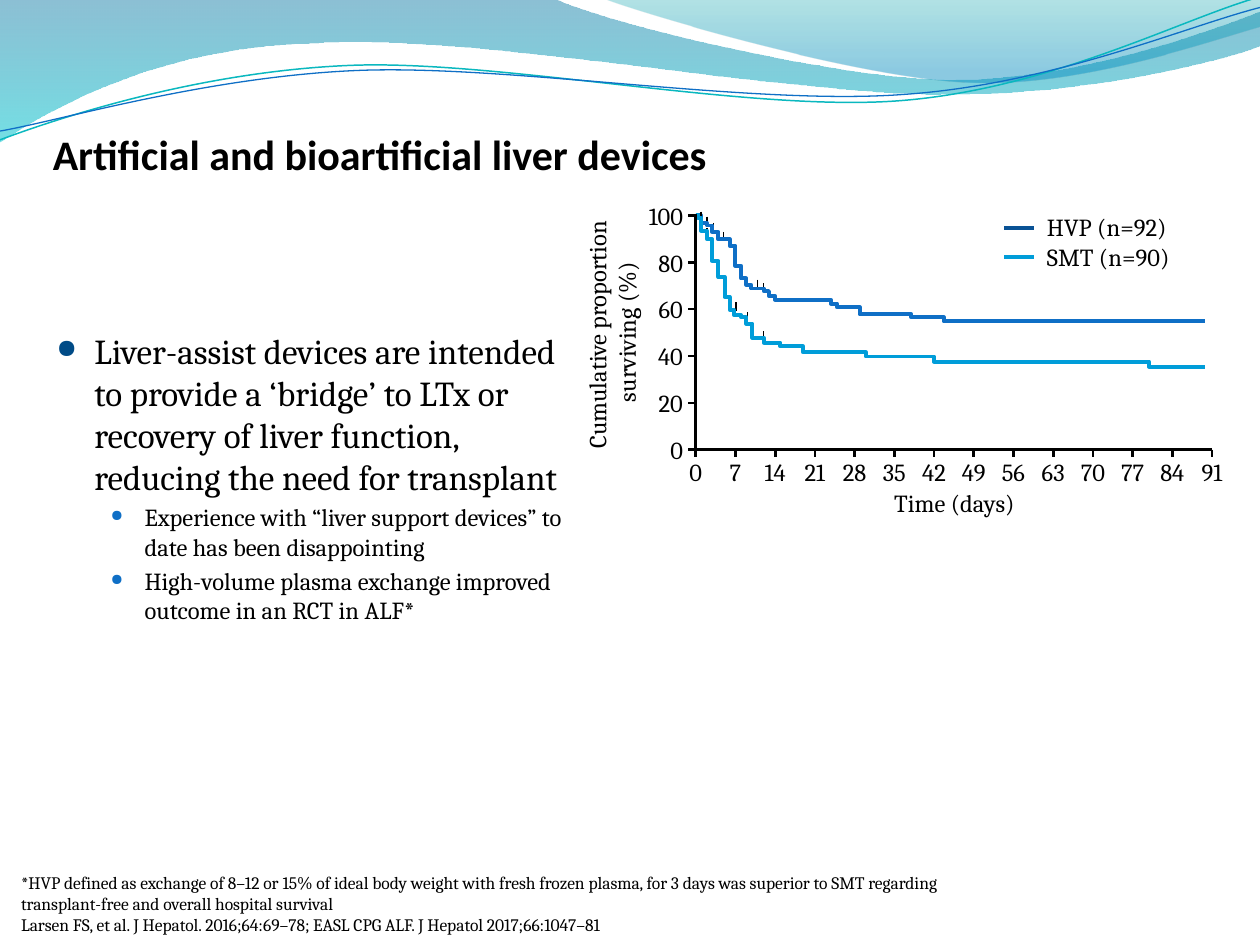
from math import cos, radians, sin

from lxml.etree import SubElement
from pptx import Presentation
from pptx.dml.color import RGBColor
from pptx.enum.shapes import MSO_CONNECTOR
from pptx.enum.text import MSO_ANCHOR, MSO_AUTO_SIZE, PP_ALIGN
from pptx.oxml.ns import qn
from pptx.util import Pt

THEME = {
    "font": "Cambria", "title_font": "Calibri",
    "title": 24, "lead": 20, "text": 14, "note": 10,
    "ink": "000000", "hvp": "0F6FC6", "hvp_key": "095295", "smt": "009DD9",
    "lead_bullet": "004B87", "sub_bullet": "0F6FC6", "teal_line": "0AB8BF",
}
TITLE = "Artificial and bioartificial liver devices"
NOTES = [
    "*HVP defined as exchange of 8–12 or 15% of ideal body weight with fresh frozen plasma, "
    "for 3 days was superior to SMT regarding transplant-free and overall hospital survival",
    "Larsen FS, et al. J Hepatol. 2016;64:69–78; EASL CPG ALF. J Hepatol 2017;66:1047–81",
]
BULLETS = [
    (0, "Liver-assist devices are intended to provide a ‘bridge’ to LTx or recovery of "
        "liver function, reducing the need for transplant"),
    (1, "Experience with “liver support devices” to date has been disappointing"),
    (1, "High-volume plasma exchange improved outcome in an RCT in ALF*"),
]
BULLET_STYLES = [
    {"size": "lead", "color": "lead_bullet", "percent": 75, "margin": 21.6, "indent": -21.6},
    {"size": "text", "color": "sub_bullet", "percent": 65, "margin": 50.4, "indent": -19.4},
]
LAST_DAY, OVERLAP = 89.7, 0.9
CURVES = [
    {"color": "hvp", "key": "hvp_key", "label": "HVP (n=92)", "joint": 75.9,
     "steps": [(0.9, 96.8), (2, 95.7), (2.9, 93), (4, 89.8), (6, 87.1), (7, 78.5), (8, 73.1),
               (8.9, 70.4), (9.8, 68.8), (12, 67.7), (12.9, 65.6), (14, 64), (23.8, 62.4),
               (24.9, 60.8), (28.9, 57.8), (38, 56.5), (43.7, 54.8)],
     "censored": [(2, 99.5), (3.1, 96.8), (4, 93), (4.9, 93), (6, 90.3), (8, 76.9),
                  (10.9, 72.6), (12, 71)]},
    {"color": "smt", "key": "smt", "label": "SMT (n=90)", "joint": 71.7,
     "steps": [(0.4, 98.9), (0.9, 93.5), (2, 89.8), (2.9, 80.6), (4, 73.7), (5.1, 65.1),
               (6, 59.7), (6.7, 57.5), (8, 56.5), (8.9, 53.8), (10, 47.8), (12, 45.7),
               (14.9, 44.1), (18.9, 41.6), (30, 39.8), (42, 37.6), (79.9, 35.5)],
     "censored": [(0.9, 101.6), (0.9, 97.8), (2, 94.6), (2.9, 85.5), (4, 78), (5.1, 69.4),
                  (6, 64), (7.1, 62.9), (9.1, 58.6), (12, 50.5)]},
]
WAVES = [
    {"path": [(0, 0), (316.8, -0.7),
              (342.7, 12.2, 478.1, 45.4, 545.8, 45.4), (614.2, 45.4, 689.8, 18.7, 720, 6.5),
              (720.7, 25.9),
              (707.8, 31.7, 626.4, 54.7, 537.1, 54), (447.8, 54, 275, 20.2, 185, 24.5),
              (92.9, 25.9, 33.1, 59.8, -0.7, 81.4)],
     "gradient": [(0, "0074A1", 45), (1, "00C6CF", 55)]},
    {"path": [(344.9, -0.7),
              (366.5, 7.9, 491, 44.6, 553.7, 46.8), (616.3, 49.7, 691.9, 23, 720, 15.1),
              (720, 0)],
     "gradient": [(0, "00A1A9", 30), (0.8, "008BBF", 45)]},
    {"path": [(0, 79.9), (34.6, 67, 113.8, 41, 199.4, 37.4),
              (284.4, 33.8, 427, 64.1, 513.4, 57.6), (599.8, 51.1, 675.4, 10.8, 718.6, -1.4)],
     "line": ("teal_line", 0.85), "center": (359.3, 41.4)},
    {"path": [(0, 74.9), (33.8, 69.1, 118.1, 43.9, 203.8, 40.3),
              (290.2, 36.7, 429.8, 60.5, 516.2, 54), (601.9, 48.2, 677.5, 15.1, 720, 4.3)],
     "line": ("hvp", 0.75), "center": (359.7, 42.5)},
]
TILT = 2.7
AXIS = {"left": 397.6, "right": 692.6, "top": 123.1, "bottom": 257, "tick": 4.4}


def color(name):
    return RGBColor.from_string(THEME.get(name, name))


def apply(target, values):
    for name, value in values.items():
        setattr(target, name, value)


def day_x(day):
    return AXIS["left"] + day * (AXIS["right"] - AXIS["left"]) / 91


def percent_y(percent):
    return AXIS["bottom"] - percent * (AXIS["bottom"] - AXIS["top"]) / 100


def add_text(slide, box, texts, size="text", font="font", bold=False, align=PP_ALIGN.LEFT,
             anchor=MSO_ANCHOR.TOP, margins=(0, 0, 0, 0), wrap=False):
    shape = slide.shapes.add_textbox(*map(Pt, box))
    frame = shape.text_frame
    sides = ("margin_left", "margin_top", "margin_right", "margin_bottom")
    apply(frame, dict(zip(sides, map(Pt, margins))))
    auto_size = MSO_AUTO_SIZE.NONE if wrap else MSO_AUTO_SIZE.SHAPE_TO_FIT_TEXT
    apply(frame, {"word_wrap": wrap, "vertical_anchor": anchor, "auto_size": auto_size})
    frame.text = "\n".join(texts)
    for paragraph in frame.paragraphs:
        paragraph.alignment = align
        apply(paragraph.font, {"name": THEME[font], "size": Pt(THEME[size]), "bold": bold})
        paragraph.font.color.rgb = color("ink")
    return shape


def add_line(slide, start, end, line_color, width):
    connector = slide.shapes.add_connector(MSO_CONNECTOR.STRAIGHT, *map(Pt, start + end))
    connector.line.color.rgb = color(line_color)
    connector.line.width = Pt(width)
    SubElement(connector._element.spPr, qn("a:effectLst"))


def add_outline(slide, points, closed=False):
    points = [(Pt(x), Pt(y)) for x, y in points]
    builder = slide.shapes.build_freeform(*points[0])
    builder.add_line_segments(points[1:], close=closed)
    shape = builder.convert_to_shape()
    shape.shadow.inherit = False
    shape.fill.background()
    shape.line.fill.background()
    return shape


def set_line(shape, line_color, width):
    shape.line.color.rgb = color(line_color)
    shape.line.width = Pt(width)


def turn(point, center):
    angle = radians(TILT)
    across, down = point[0] - center[0], point[1] - center[1]
    return (center[0] + across * cos(angle) - down * sin(angle),
            center[1] + across * sin(angle) + down * cos(angle))


def bend(shape, segments):
    lines = iter(list(shape._element.spPr.iter(qn("a:lnTo"))))
    for segment in segments:
        first = next(lines)
        if len(segment) == 6:
            first.tag = qn("a:cubicBezTo")
            for line in (next(lines), next(lines)):
                first.append(line[0])
                line.getparent().remove(line)


def add_wave(slide, wave):
    path = wave["path"]
    points = [segment[i:i + 2] for segment in path for i in range(0, len(segment), 2)]
    if "center" in wave:
        points = [turn(point, wave["center"]) for point in points]
    shape = add_outline(slide, points, "gradient" in wave)
    bend(shape, path[1:])
    if "line" in wave:
        set_line(shape, *wave["line"])
        shape.rotation = 360 - TILT
        return
    shape.fill.gradient()
    shape.fill.gradient_angle = 270
    for stop, (position, stop_color, _) in zip(shape.fill.gradient_stops, wave["gradient"]):
        stop.position = position
        stop.color.rgb = color(stop_color)
    for element, (_, _, opacity) in zip(shape._element.spPr.iter(qn("a:srgbClr")), wave["gradient"]):
        SubElement(element, qn("a:alpha"), val=str(opacity * 1000))


def add_bullets(slide):
    shape = add_text(slide, (25.2, 105.8, 306.7, 364.3), [text for _, text in BULLETS],
                     margins=(7.2, 82.4, 7.2, 3.6), wrap=True)
    for index, (paragraph, (level, _)) in enumerate(zip(shape.text_frame.paragraphs, BULLETS)):
        style = BULLET_STYLES[level]
        size = THEME[style["size"]]
        paragraph.level = level
        if index:
            paragraph.space_before = Pt(size * 0.2)
        properties = paragraph._p.get_or_add_pPr()
        properties.set("marL", str(Pt(style["margin"])))
        properties.set("indent", str(Pt(style["indent"])))
        bullet_color = SubElement(properties, qn("a:buClr"))
        SubElement(bullet_color, qn("a:srgbClr"), val=THEME[style["color"]])
        SubElement(properties, qn("a:buSzPct"), val=str(style["percent"] * 1000))
        SubElement(properties, qn("a:buChar"), char="●")
        properties.append(properties.find(qn("a:defRPr")))
        paragraph.font.size = Pt(size)


def add_curve(slide, curve):
    for day, percent in curve["censored"]:
        x, y = day_x(day), percent_y(percent)
        add_line(slide, (x, y), (x, y + 4.7), "ink", 0.75)
    joint, level = curve["joint"], 100
    head, tail = [(0, level)], []
    for day, percent in curve["steps"]:
        if day > joint and not tail:
            head.append((joint, level))
            tail.append((joint - OVERLAP, level))
        (tail or head).extend([(day, level), (day, percent)])
        level = percent
    if not tail:
        head.append((joint, level))
        tail.append((joint - OVERLAP, level))
    tail.append((LAST_DAY, level))
    for points in (head, tail):
        shape = add_outline(slide, [(day_x(day), percent_y(percent)) for day, percent in points])
        set_line(shape, curve["color"], 2.25)


def add_axes(slide):
    left, right, top, bottom, tick = AXIS.values()
    add_line(slide, (left - tick, bottom), (right, bottom), "ink", 1.5)
    add_line(slide, (left, top - 0.7), (left, bottom + tick), "ink", 1.5)
    for day in range(0, 92, 7):
        x, width = day_x(day), 5.8 + 7.9 * len(str(day))
        if day:
            add_line(slide, (x, bottom), (x, bottom + tick), "ink", 1.5)
        add_text(slide, (x - width / 2, bottom + tick, width, 17), [str(day)],
                 align=PP_ALIGN.CENTER, margins=(2.9, 0, 2.9, 0))
    for percent in range(0, 101, 20):
        y, width = percent_y(percent), 5.8 + 7.9 * len(str(percent))
        if percent:
            add_line(slide, (left - tick, y), (left, y), "ink", 1.5)
        add_text(slide, (left - tick - width, y - 8.5, width, 17), [str(percent)],
                 align=PP_ALIGN.RIGHT, anchor=MSO_ANCHOR.MIDDLE, margins=(2.9, 0, 2.9, 0))
    add_text(slide, (508.3, 279, 74.2, 17), ["Time (days)"], align=PP_ALIGN.CENTER)
    label = add_text(slide, (278.6, 172.8, 141.8, 33.8), ["Cumulative proportion \vsurviving (%)"],
                     align=PP_ALIGN.CENTER)
    label.rotation = 270


def add_legend(slide):
    add_text(slide, (595.4, 121.4, 79.9, 33.8), [curve["label"] for curve in CURVES],
             margins=(2.9, 0, 2.9, 0))
    for row, curve in enumerate(CURVES):
        y = 130.3 + row * 16.6
        add_line(slide, (573.8, y), (591.1, y), curve["key"], 2.25)


def main():
    presentation = Presentation()
    apply(presentation, {"slide_width": Pt(720), "slide_height": Pt(540)})
    slide = presentation.slides.add_slide(presentation.slide_layouts[6])
    for wave in WAVES:
        add_wave(slide, wave)
    add_text(slide, (30.2, 12.2, 648, 90), [TITLE], size="title", font="title_font", bold=True,
             anchor=MSO_ANCHOR.BOTTOM, margins=(0, 3.6, 0, 0), wrap=True)
    add_text(slide, (0.5, 491, 575.3, 49), NOTES, size="note", anchor=MSO_ANCHOR.BOTTOM,
             margins=(11.5, 5.8, 11.5, 5.8), wrap=True)
    add_bullets(slide)
    for curve in CURVES:
        add_curve(slide, curve)
    add_axes(slide)
    add_legend(slide)
    presentation.save("out.pptx")


if __name__ == "__main__":
    main()
